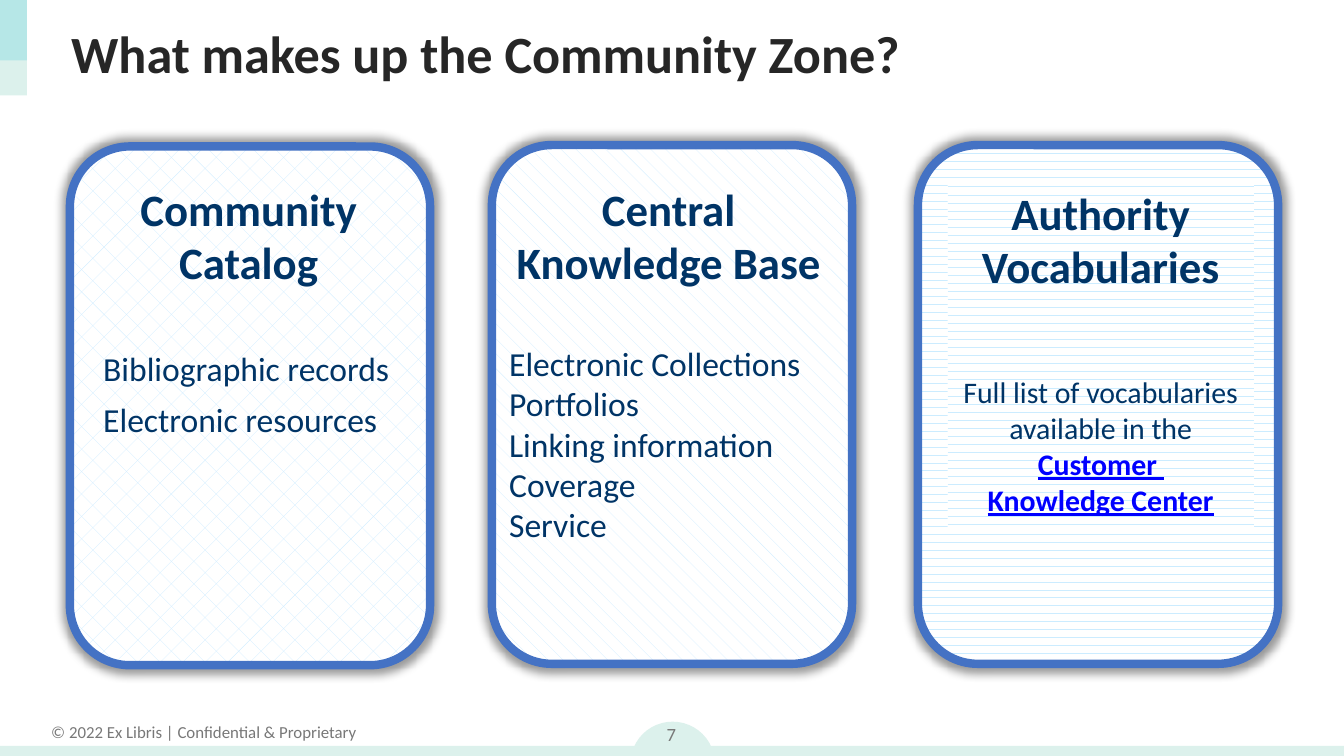
from lxml import etree
from pptx import Presentation
from pptx.dml.color import RGBColor
from pptx.enum import dml, shapes, text
from pptx.oxml import parse_xml
from pptx.oxml.ns import nsdecls, qn
from pptx.util import Inches, Pt

THEME = {
    "font": "Calibri",
    "title": "262626", "navy": "003466", "link": "0000FF", "gray": "787878",
    "mint": "DCF1EC", "aqua": "50CFDA", "border": "4472C4",
    "hatch": "CCECFF", "paper": "FFFFFF",
    "title_size": 28, "heading_size": 24, "body_size": 18, "note_size": 16,
    "footer_size": 9, "number_size": 10,
}
LEFT, CENTER = text.PP_ALIGN.LEFT, text.PP_ALIGN.CENTER
ROUND = shapes.MSO_SHAPE.ROUNDED_RECTANGLE
RECTANGLE = shapes.MSO_SHAPE.RECTANGLE

TITLE = "What makes up the Community Zone?"
FOOTER = "© 2022 Ex Libris | Confidential & Proprietary"
PAGE_NUMBER = "7"
LINK_LINES = ("Customer ", "Knowledge Center")
CARD_SIZE = (2.68, 3.86)

# gap: points between the heading and the body; spacing: points between body lines
CARDS = [
    {"at": (0.52, 1.09), "pattern": dml.MSO_PATTERN.DIAGONAL_BRICK,
     "text_box": (0.67, 1.3, 2.36, 3.32), "heading": "Community Catalog",
     "body": ["Bibliographic records", "Electronic resources"],
     "gap": 31.5, "spacing": 6},
    {"at": (3.66, 1.08), "pattern": dml.MSO_PATTERN.SHINGLE,
     "text_box": (3.69, 1.3, 2.57, 3.13), "heading": "Central Knowledge Base",
     "body": ["Electronic Collections", "Portfolios", "Linking information",
              "Coverage", "Service"],
     "gap": 29, "spacing": 0},
    {"at": (6.83, 1.08), "pattern": dml.MSO_PATTERN.DASHED_HORIZONTAL,
     "text_box": (7.05, 1.33, 2.28, 2.59), "heading": "Authority Vocabularies",
     "body": ["Full list of vocabularies available in the "],
     "gap": 43.5, "spacing": 0, "links": LINK_LINES},
]


def color(name):
    return RGBColor.from_string(THEME[name])


def style(font, size, color_name, bold=False):
    font.name = THEME["font"]
    font.size = Pt(THEME[size])
    font.color.rgb = color(color_name)
    font.bold = bold


def add_plain_shape(slide, kind, box, fill=None):
    shape = slide.shapes.add_shape(kind, *map(Inches, box))
    shape.shadow.inherit = False
    shape.line.fill.background()
    if fill:
        shape.fill.solid()
        shape.fill.fore_color.rgb = color(fill)
    return shape


def add_hatched_shape(slide, kind, box, pattern):
    shape = add_plain_shape(slide, kind, box)
    shape.fill.patterned()
    shape.fill.pattern = pattern
    shape.fill.fore_color.rgb = color("hatch")
    shape.fill.back_color.rgb = color("paper")
    return shape


def add_glow_shadow(shape):
    """Soft black shadow on all sides, slightly larger than the shape."""
    effects = shape._element.spPr.find(qn("a:effectLst"))
    effects.append(parse_xml(
        f'<a:outerShdw {nsdecls("a")} blurRad="{Pt(5)}" sx="102000" sy="102000" '
        'algn="ctr" rotWithShape="0"><a:srgbClr val="000000">'
        '<a:alpha val="40000"/></a:srgbClr></a:outerShdw>'))


def add_label(slide, box, words, size, wrap=True):
    frame = slide.shapes.add_textbox(*map(Inches, box)).text_frame
    frame.word_wrap = wrap
    paragraph = frame.paragraphs[0]
    paragraph.text = words
    paragraph.alignment = CENTER
    style(paragraph.font, size, "gray")
    return frame


def add_link_run(paragraph, words):
    run = paragraph.add_run()
    run.text = words
    style(run.font, "note_size", "link", bold=True)
    run.font.underline = True


def fill_card_text(frame, card):
    frame.word_wrap = True
    frame.vertical_anchor = text.MSO_ANCHOR.TOP
    heading = frame.paragraphs[0]
    heading.text = card["heading"]
    heading.alignment = CENTER
    style(heading.font, "heading_size", "navy", bold=True)

    links = card.get("links")
    for index, line in enumerate(card["body"]):
        paragraph = frame.add_paragraph()
        paragraph.text = line
        paragraph.alignment = CENTER if links else LEFT
        paragraph.space_before = Pt(card["spacing"] if index else card["gap"])
        style(paragraph.font, "note_size" if links else "body_size", "navy")
    if links:
        add_link_run(paragraph, links[0])
        last = frame.add_paragraph()
        last.alignment = CENTER
        add_link_run(last, links[1])


def add_card(slide, card):
    panel = add_hatched_shape(slide, ROUND, card["at"] + CARD_SIZE, card["pattern"])
    panel.line.color.rgb = color("border")
    panel.line.width = Pt(4.5)
    add_glow_shadow(panel)
    if "links" in card:
        holder = add_hatched_shape(slide, RECTANGLE, card["text_box"], card["pattern"])
    else:
        holder = slide.shapes.add_textbox(*map(Inches, card["text_box"]))
    fill_card_text(holder.text_frame, card)


def add_frame(slide):
    """Corner tabs, bottom bar, copyright line and page number."""
    add_plain_shape(slide, shapes.MSO_SHAPE.OVAL, (4.69, 5.37, 0.63, 0.63), "mint")
    add_label(slide, (0.27, 5.32, 2.49, 0.25), FOOTER, "footer_size", wrap=False)
    add_plain_shape(slide, RECTANGLE, (0, 5.55, 10, 0.11), "mint")
    add_plain_shape(slide, RECTANGLE, (0, 0, 0.2, 0.71), "mint")
    tab = add_plain_shape(slide, RECTANGLE, (0, 0, 0.2, 0.45), "aqua")
    tab_color = tab._element.spPr.find(qn("a:solidFill"))[0]
    etree.SubElement(tab_color, qn("a:alpha"), val="27000")
    number = add_label(slide, (4.7, 5.26, 0.59, 0.4), PAGE_NUMBER, "number_size")
    number.vertical_anchor = text.MSO_ANCHOR.MIDDLE


def set_title(slide):
    title = slide.shapes.title
    title.left, title.top, title.width, title.height = map(
        Inches, (0.43, 0.08, 9.21, 0.63))
    title.text_frame.text = TITLE
    title.text_frame.vertical_anchor = text.MSO_ANCHOR.MIDDLE
    paragraph = title.text_frame.paragraphs[0]
    paragraph.alignment = LEFT
    style(paragraph.font, "title_size", "title", bold=True)


def main():
    presentation = Presentation()
    presentation.slide_width = Inches(10)
    presentation.slide_height = Inches(10 * 9 / 16)
    slide = presentation.slides.add_slide(presentation.slide_layouts[5])
    set_title(slide)
    add_frame(slide)
    for card in CARDS:
        add_card(slide, card)
    presentation.save("out.pptx")


if __name__ == "__main__":
    main()
